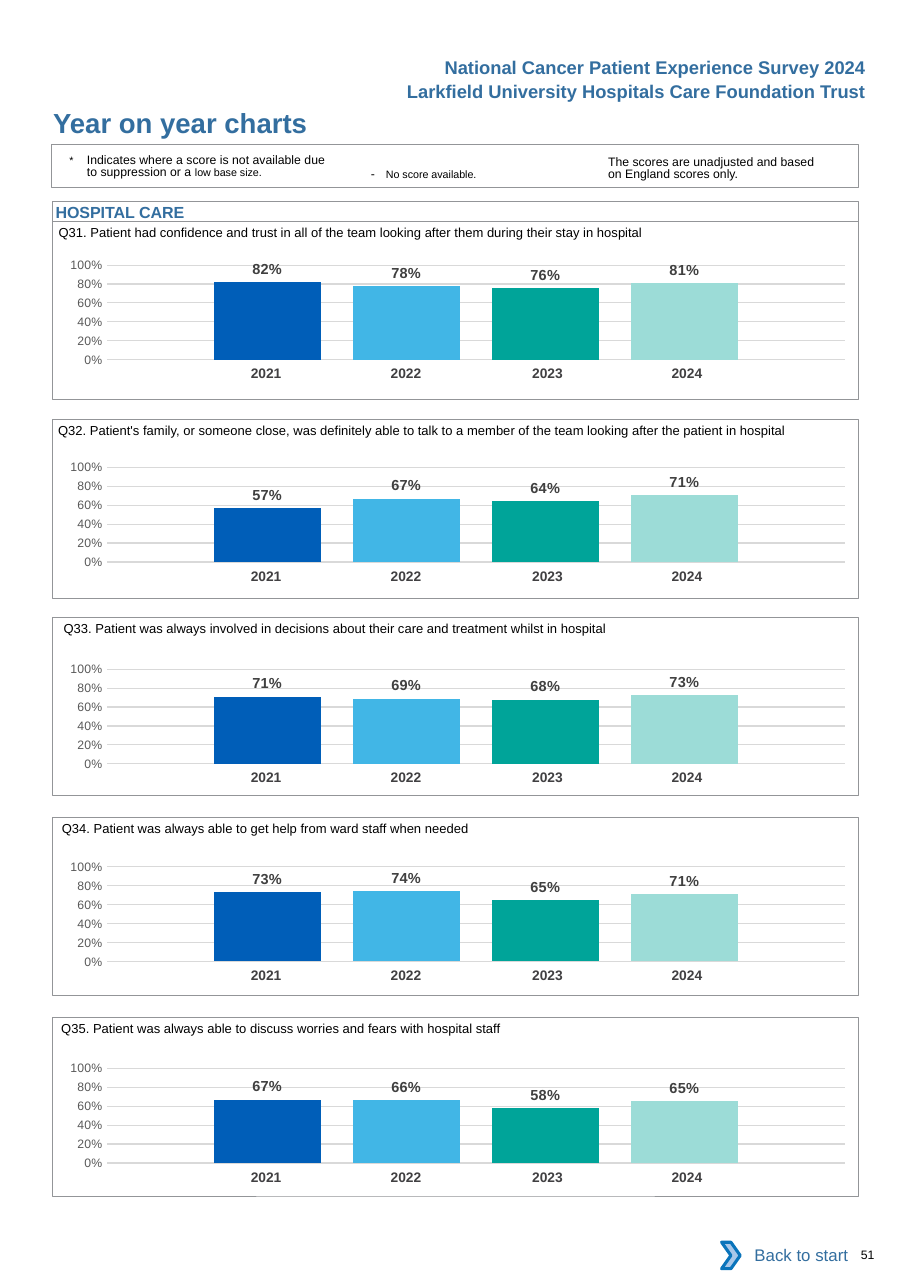
from dataclasses import dataclass

from lxml import etree
from pptx import Presentation
from pptx.chart.data import CategoryChartData
from pptx.dml.color import RGBColor
from pptx.enum.chart import XL_CHART_TYPE, XL_LABEL_POSITION, XL_TICK_MARK
from pptx.enum.shapes import MSO_SHAPE
from pptx.enum.text import MSO_ANCHOR, PP_ALIGN
from pptx.oxml.ns import qn
from pptx.util import Pt

LEFT, CENTER, RIGHT = PP_ALIGN.LEFT, PP_ALIGN.CENTER, PP_ALIGN.RIGHT
TOP, MIDDLE = MSO_ANCHOR.TOP, MSO_ANCHOR.MIDDLE
RECTANGLE, CHEVRON = MSO_SHAPE.RECTANGLE, MSO_SHAPE.CHEVRON
COLUMNS = XL_CHART_TYPE.COLUMN_CLUSTERED
OUTSIDE_END = XL_LABEL_POSITION.OUTSIDE_END
NO_TICKS = XL_TICK_MARK.NONE
NO_GRID_STYLE = "{2D5ABB26-0587-4C30-8999-92F81FD0307C}"


@dataclass(frozen=True)
class Theme:
    font: str = "Arial"
    blue: str = "336E9F"
    black: str = "000000"
    frame: str = "939598"
    grid: str = "D9D9D9"
    axis: str = "595959"
    value: str = "404040"
    year: str = "414042"
    arrow_fill: str = "A8C7E9"
    arrow_line: str = "0A74BB"
    bars: tuple = ("005EB8", "41B6E6", "00A499", "9CDCD7")
    title: float = 18
    header: float = 12
    link: float = 11
    section: float = 10.5
    value_size: float = 9.5
    year_size: float = 9
    question: float = 8.5
    small: float = 8
    tiny: float = 7


THEME = Theme()
PANEL_LEFT, PANEL_WIDTH, PANEL_HEIGHT = 34.2, 527, 116.6
CHART_LEFT, CHART_HEIGHT, YEARS_DROP = 28.3, 92.9, 76
PLOT_AREA = {"x": 0.079, "y": 0.145, "w": 0.915, "h": 0.666}
YEARS = ("2021", "2022", "2023", "2024")
YEAR_WIDTHS = (91.4, 91.4, 96.5, 91.4)
YEAR_RIGHT_MARGINS = (0, 0, 2.9, 8.6)

# Question, its left edge, panel top, chart top, scores for the four years
PANELS = (
    ("Q31. Patient had confidence and trust in all of the team looking after them "
     "during their stay in hospital", 38.3, 144.7, 159.8, (0.82, 0.78, 0.76, 0.81)),
    ("Q32. Patient's family, or someone close, was definitely able to talk to a member "
     "of the team looking after the patient in hospital",
     38, 274.3, 292, (0.57, 0.67, 0.64, 0.71)),
    ("Q33. Patient was always involved in decisions about their care and treatment "
     "whilst in hospital", 41.6, 403.2, 423.9, (0.71, 0.69, 0.68, 0.73)),
    ("Q34. Patient was always able to get help from ward staff when needed",
     40.4, 534.2, 553, (0.73, 0.74, 0.65, 0.71)),
    ("Q35. Patient was always able to discuss worries and fears with hospital staff",
     40, 665, 684.7, (0.67, 0.66, 0.58, 0.65)),
)


def color(code):
    return RGBColor.from_string(code)


def style_font(font, size, code, bold=False):
    font.name, font.size, font.bold = THEME.font, Pt(size), bold
    font.color.rgb = color(code)


def add_text(page, spans, left, top, width, height, size=THEME.small, code=THEME.black,
             bold=False, align=LEFT, anchor=TOP, spacing=None, hanging=0, wrap=True):
    """Add a text box; spans is a string or a list of (text, size) pairs."""
    box = page.shapes.add_textbox(Pt(left), Pt(top), Pt(width), Pt(height))
    frame = box.text_frame
    frame.word_wrap, frame.vertical_anchor = wrap, anchor
    frame.margin_left = frame.margin_right = frame.margin_top = frame.margin_bottom = 0
    para = frame.paragraphs[0]
    para.alignment = align
    if spacing:
        para.line_spacing = Pt(spacing)
    if hanging:
        properties = para._p.get_or_add_pPr()
        properties.set("marL", str(Pt(hanging)))
        properties.set("indent", str(-Pt(hanging)))
    for text, span_size in [(spans, size)] if isinstance(spans, str) else spans:
        span = para.add_run()
        span.text = text
        style_font(span.font, span_size, code, bold)


def add_outline(page, left, top, width, height, kind=RECTANGLE, fill=None,
                line=THEME.frame, weight=0.5):
    shape = page.shapes.add_shape(kind, Pt(left), Pt(top), Pt(width), Pt(height))
    shape.shadow.inherit = False
    if fill:
        shape.fill.solid()
        shape.fill.fore_color.rgb = color(fill)
    else:
        shape.fill.background()
    shape.line.color.rgb = color(line)
    shape.line.width = Pt(weight)


def add_years(page, top):
    table = page.shapes.add_table(1, len(YEARS), Pt(124.6), Pt(top),
                                  Pt(sum(YEAR_WIDTHS)), Pt(19.4)).table
    table.first_row = table.horz_banding = False
    table._tbl.tblPr.find(qn("a:tableStyleId")).text = NO_GRID_STYLE
    for column, (year, width, margin) in enumerate(
            zip(YEARS, YEAR_WIDTHS, YEAR_RIGHT_MARGINS)):
        table.columns[column].width = Pt(width)
        cell = table.cell(0, column)
        cell.fill.background()
        cell.margin_left, cell.margin_right = Pt(7.2), Pt(margin)
        cell.margin_top = cell.margin_bottom = Pt(3.6)
        cell.text = year
        para = cell.text_frame.paragraphs[0]
        para.alignment = CENTER
        style_font(para.runs[0].font, THEME.year_size, THEME.year, bold=True)


def fix_plot_area(chart):
    plot_area = chart._chartSpace.chart.plotArea
    for old in plot_area.findall(qn("c:layout")):
        plot_area.remove(old)
    layout = etree.Element(qn("c:layout"))
    manual = etree.SubElement(layout, qn("c:manualLayout"))
    settings = {"layoutTarget": "inner", "xMode": "edge", "yMode": "edge", **PLOT_AREA}
    for name, value in settings.items():
        etree.SubElement(manual, qn(f"c:{name}")).set("val", str(value))
    plot_area.insert(0, layout)


def add_score_chart(page, top, scores):
    data = CategoryChartData(number_format="0%")
    data.categories = ["1"]
    for number, score in enumerate(scores, 1):
        data.add_series(f"Series {number}", [score])
    chart = page.shapes.add_chart(COLUMNS, Pt(CHART_LEFT), Pt(top), Pt(PANEL_WIDTH),
                                  Pt(CHART_HEIGHT), data).chart
    chart.has_legend = chart.has_title = False
    style_font(chart.font, THEME.small, THEME.black)
    fix_plot_area(chart)

    # Axes
    chart.category_axis.visible = False
    axis = chart.value_axis
    axis.minimum_scale, axis.maximum_scale, axis.major_unit = 0, 1, 0.2
    axis.major_tick_mark = axis.minor_tick_mark = NO_TICKS
    axis.format.line.fill.background()
    axis.major_gridlines.format.line.color.rgb = color(THEME.grid)
    axis.major_gridlines.format.line.width = Pt(0.75)
    axis.tick_labels.number_format = "0%"
    axis.tick_labels.number_format_is_linked = False
    style_font(axis.tick_labels.font, THEME.small, THEME.axis)

    # Bars and their values
    plot = chart.plots[0]
    plot.vary_by_categories, plot.gap_width, plot.overlap = False, 200, -30
    for series, code in zip(plot.series, THEME.bars):
        series.format.fill.solid()
        series.format.fill.fore_color.rgb = color(code)
        labels = series.data_labels
        labels.show_value, labels.position = True, OUTSIDE_END
        labels.number_format, labels.number_format_is_linked = "0%", False
        style_font(labels.font, THEME.value_size, THEME.value, bold=True)


def add_panel(page, question, text_left, top, chart_top, scores):
    add_years(page, chart_top + YEARS_DROP)
    add_score_chart(page, chart_top, scores)
    add_outline(page, PANEL_LEFT, top, PANEL_WIDTH, PANEL_HEIGHT)
    add_text(page, question, text_left, top + 0.2, 515, 14, size=THEME.question,
             anchor=MIDDLE)


def main():
    deck = Presentation()
    deck.slide_width, deck.slide_height = Pt(594.72), Pt(841.68)
    page = deck.slides.add_slide(deck.slide_layouts[6])

    # Header and title
    headers = ("National Cancer Patient Experience Survey 2024",
               "Larkfield University Hospitals Care Foundation Trust")
    for row, header in enumerate(headers):
        add_text(page, header, 236, 36.4 + 16 * row, 330, 14.4, size=THEME.header,
                 code=THEME.blue, bold=True, align=RIGHT, wrap=False)
    add_text(page, "Year on year charts", 34.7, 69.2, 324, 21.6, size=THEME.title,
             code=THEME.blue, bold=True)

    # Key
    add_outline(page, 33.9, 94.3, PANEL_WIDTH, 28.1, weight=0.75)
    add_text(page, [("*\t", THEME.tiny),
                    ("Indicates where a score is not available due to suppression or a ",
                     THEME.small), ("low base size.", THEME.tiny)],
             45.3, 100.8, 172, 17, spacing=8.1, hanging=11.5)
    add_text(page, [("-\t", THEME.small), ("No score available.", THEME.tiny)],
             242.4, 107.7, 120, 12, anchor=MIDDLE, hanging=9.8)
    add_text(page, "The scores are unadjusted and based on England scores only.",
             397.4, 102.1, 140, 17, spacing=8.1)

    # Section heading and question panels
    add_outline(page, PANEL_LEFT, 131.8, PANEL_WIDTH, 12.9)
    add_text(page, "HOSPITAL CARE", 36.3, 132.6, 300, 12, size=THEME.section,
             code=THEME.blue, bold=True)
    for panel in PANELS:
        add_panel(page, *panel)

    # Footer
    add_text(page, "Back to start", 484, 805.2, 70.4, 30, size=THEME.link,
             code=THEME.blue, align=RIGHT, anchor=MIDDLE)
    add_outline(page, 471.6, 811.8, 12.2, 17.3, kind=CHEVRON, fill=THEME.arrow_fill,
                line=THEME.arrow_line, weight=2)
    add_text(page, "51", 562.6, 815.2, 20, 9.4)

    deck.save("out.pptx")


if __name__ == "__main__":
    main()
